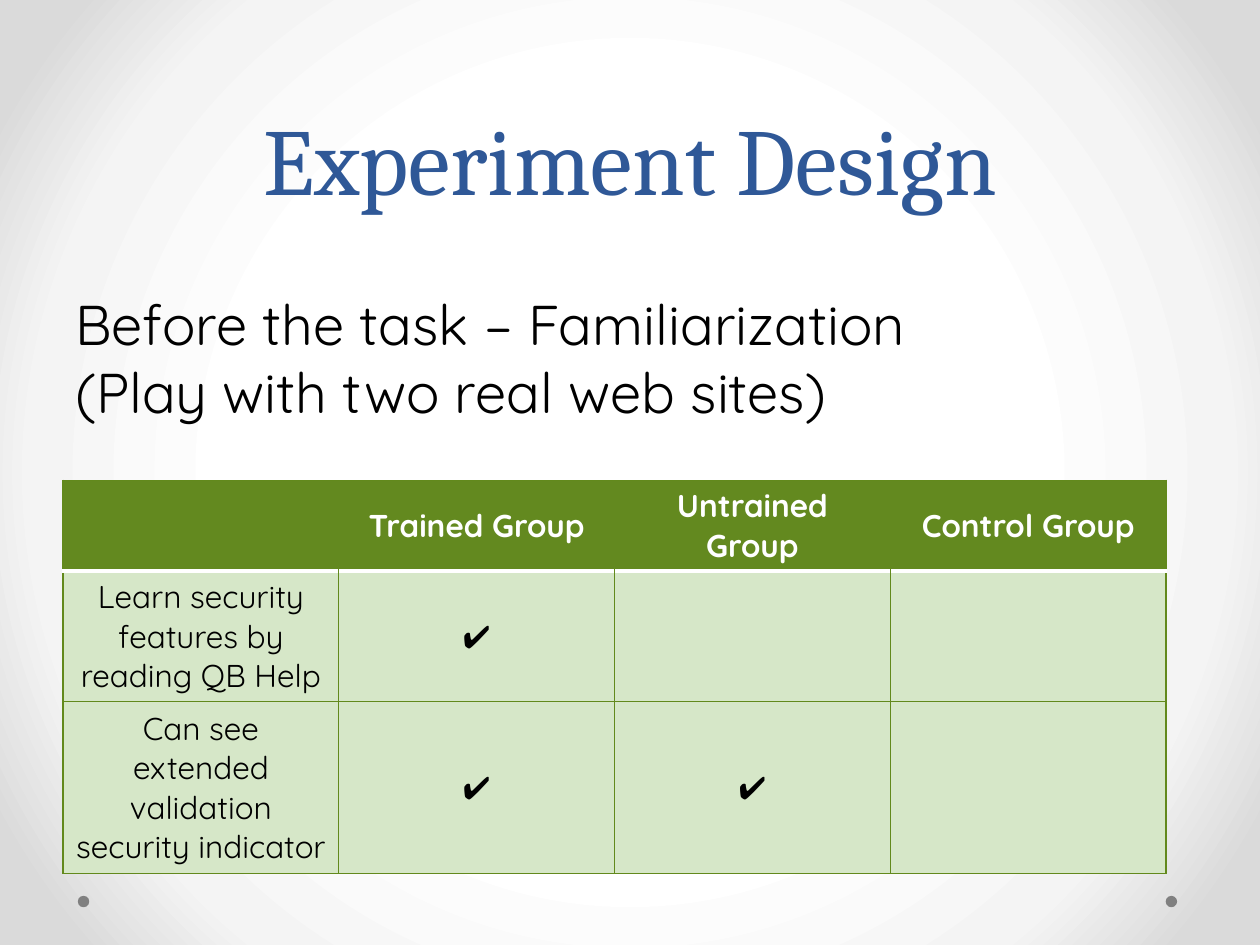
"""Build the experiment design slide with its group comparison table."""
from lxml import etree
from pptx import Presentation
from pptx.dml.color import RGBColor
from pptx.enum import shapes, text
from pptx.oxml import ns
from pptx.util import Cm, Pt

TITLE_BLUE = RGBColor(0x2F, 0x58, 0x97)
HEADER_GREEN = RGBColor(0x63, 0x89, 0x1F)
BORDER_GREEN = RGBColor(0x62, 0x89, 0x1C)
PALE_GREEN = RGBColor(0xD6, 0xE7, 0xC8)
DOT_GRAY = RGBColor(0x80, 0x80, 0x80)
BLACK = RGBColor(0, 0, 0)
WHITE = RGBColor(0xFF, 0xFF, 0xFF)

TITLE = "Experiment Design"
INTRO = ["Before the task – Familiarization", "(Play with two real web sites)"]
GROUPS = [
    ["", "Trained Group", "Untrained Group", "Control Group"],
    ["Learn security features by reading QB Help", "✔", "", ""],
    ["Can see extended validation security indicator", "✔", "✔", ""],
]
ROW_HEIGHTS = [1.83, 2.64, 3.45]
COLUMN_WIDTH = 5.56
BACKDROP = [(50, WHITE), (76, RGBColor(0xF4, 0xF4, 0xF4)), (92, RGBColor(0xDA, 0xDA, 0xDA))]
MARGIN = 1.27
DOT_SIZE = 0.23
DOT_LEFTS = [23.5, 1.57]


def write(frame, lines, *, size, color, font="Quicksand", bold=False, align=None, spacing=None):
    frame.word_wrap = True
    for index, line in enumerate(lines):
        paragraph = frame.add_paragraph() if index else frame.paragraphs[0]
        paragraph.alignment = align
        paragraph.line_spacing = spacing
        paragraph.font.size = Pt(size)
        if line:
            run = paragraph.add_run()
            run.text = line
            run.font.name, run.font.size, run.font.bold = font, Pt(size), bold
            run.font.color.rgb = color


def child(parent, tag, **attributes):
    return etree.SubElement(parent, ns.qn(tag), {k: str(v) for k, v in attributes.items()})


def paint_backdrop(slide):
    slide.background.fill.gradient()
    gradient = slide.element.find(".//" + ns.qn("a:gradFill"))
    for part in list(gradient):
        gradient.remove(part)
    stops = child(gradient, "a:gsLst")
    for percent, color in BACKDROP:
        child(child(stops, "a:gs", pos=percent * 1000), "a:srgbClr", val=color)
    circle = child(gradient, "a:path", path="circle")
    child(circle, "a:fillToRect", l=50000, t=50000, r=50000, b=50000)


def set_border(cell, side, color, width=0.75):
    line = child(cell._tc.get_or_add_tcPr(), "a:ln" + side, w=int(Pt(width)))
    if color is None:
        child(line, "a:noFill")
    else:
        child(child(line, "a:solidFill"), "a:srgbClr", val=color)


def add_groups(slide):
    columns = len(GROUPS[0])
    table = slide.shapes.add_table(
        len(GROUPS), columns, Cm(MARGIN), Cm(9.68),
        Cm(COLUMN_WIDTH * columns), Cm(sum(ROW_HEIGHTS))).table
    for column in table.columns:
        column.width = Cm(COLUMN_WIDTH)
    for r, (row, height) in enumerate(zip(GROUPS, ROW_HEIGHTS)):
        table.rows[r].height = Cm(height)
        header = r == 0
        for c, label in enumerate(row):
            cell = table.cell(r, c)
            cell.vertical_anchor = text.MSO_ANCHOR.MIDDLE
            write(cell.text_frame, [label], size=18, bold=header,
                  color=WHITE if header else BLACK, align=text.PP_ALIGN.CENTER)
            set_border(cell, "L", None if header and c > 0 else BORDER_GREEN)
            set_border(cell, "R", None if header and c < columns - 1 else BORDER_GREEN)
            set_border(cell, "T", *((WHITE, 2.25) if r == 1 else (BORDER_GREEN,)))
            set_border(cell, "B", *((WHITE, 2.25) if header else (BORDER_GREEN,)))
            cell.fill.solid()
            cell.fill.fore_color.rgb = HEADER_GREEN if header else PALE_GREEN


def main():
    deck = Presentation()
    deck.slide_width, deck.slide_height = Cm(25.4), Cm(19.05)
    slide = deck.slides.add_slide(deck.slide_layouts[6])
    paint_backdrop(slide)

    for left in DOT_LEFTS:
        dot = slide.shapes.add_shape(
            shapes.MSO_SHAPE.OVAL, Cm(left), Cm(18.06), Cm(DOT_SIZE), Cm(DOT_SIZE))
        dot.shadow.inherit = False
        dot.fill.solid()
        dot.fill.fore_color.rgb = DOT_GRAY
        dot.line.fill.background()

    title = slide.shapes.add_textbox(Cm(MARGIN), Cm(0), Cm(22.86), Cm(4.45)).text_frame
    title.vertical_anchor = text.MSO_ANCHOR.BOTTOM
    write(title, [TITLE], size=54, color=TITLE_BLUE, font="Cambria",
          align=text.PP_ALIGN.CENTER, spacing=Pt(58))

    add_groups(slide)

    intro = slide.shapes.add_textbox(Cm(MARGIN), Cm(5.72), Cm(20.65), Cm(3)).text_frame
    write(intro, INTRO, size=32, color=BLACK)

    deck.save("out.pptx")


if __name__ == "__main__":
    main()
